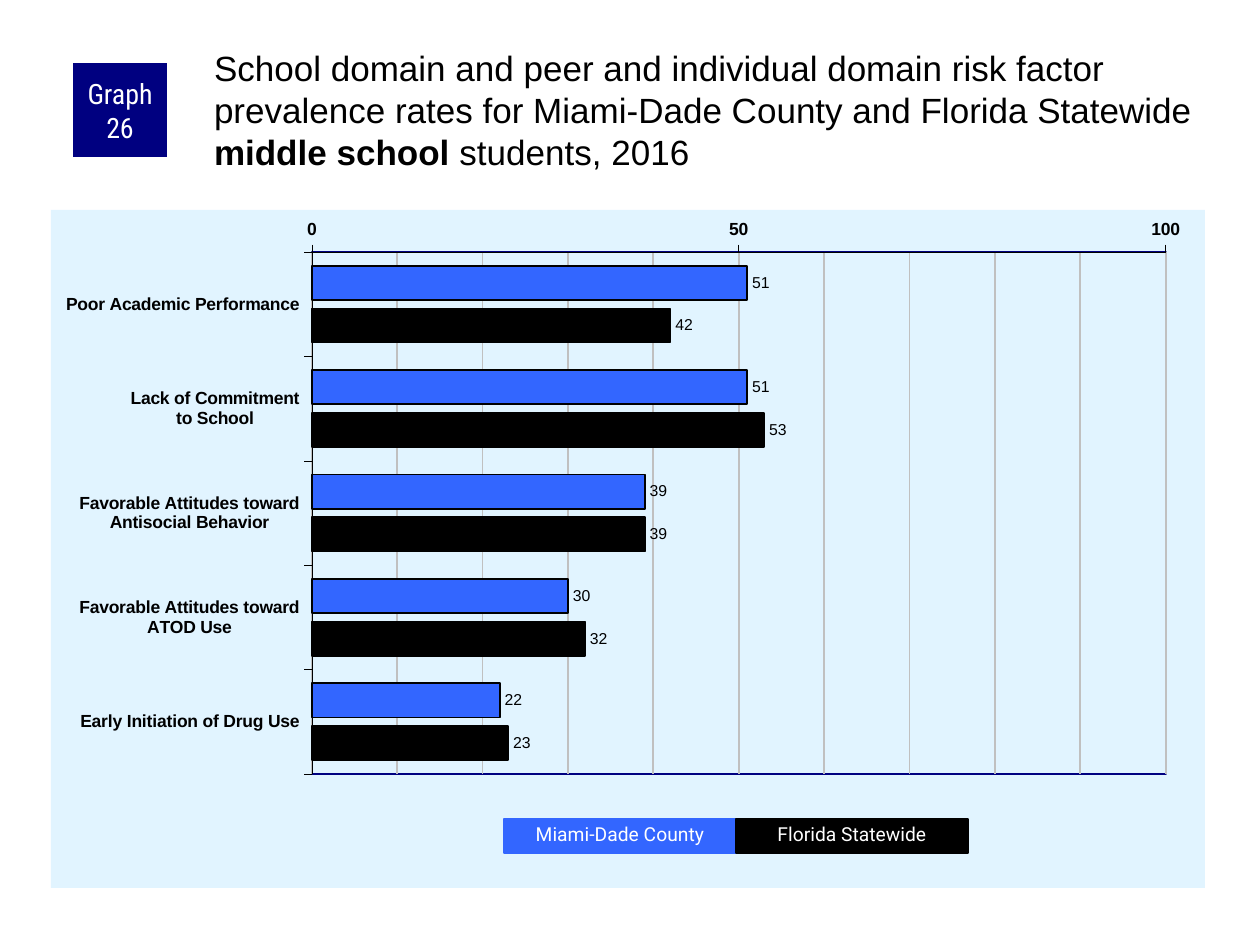
from copy import deepcopy

from lxml import etree
from pptx import Presentation
from pptx.chart.data import CategoryChartData
from pptx.dml.color import RGBColor
from pptx.enum.chart import XL_AXIS_CROSSES, XL_CHART_TYPE, XL_LABEL_POSITION, XL_TICK_MARK
from pptx.enum.shapes import MSO_SHAPE
from pptx.enum.text import MSO_ANCHOR, MSO_AUTO_SIZE, PP_ALIGN
from pptx.oxml.ns import qn
from pptx.util import Emu, Pt

RECTANGLE = MSO_SHAPE.RECTANGLE
LEFT, CENTER = PP_ALIGN.LEFT, PP_ALIGN.CENTER
TOP, MIDDLE = MSO_ANCHOR.TOP, MSO_ANCHOR.MIDDLE
AXIS_MAXIMUM = XL_AXIS_CROSSES.MAXIMUM
CLUSTERED_BARS = XL_CHART_TYPE.BAR_CLUSTERED
OUTSIDE_END = XL_LABEL_POSITION.OUTSIDE_END
TICK_OUTSIDE, TICK_NONE = XL_TICK_MARK.OUTSIDE, XL_TICK_MARK.NONE

BLACK = RGBColor(0x00, 0x00, 0x00)
WHITE = RGBColor(0xFF, 0xFF, 0xFF)
NAVY = RGBColor(0x00, 0x00, 0x80)
BLUE = RGBColor(0x33, 0x66, 0xFF)
PALE_BLUE = RGBColor(0xE1, 0xF4, 0xFF)
GRAY = RGBColor(0xC0, 0xC0, 0xC0)

PX_PER_INCH = 126
CHART_NAMESPACE = "http://schemas.openxmlformats.org/drawingml/2006/chart"
DRAWING_NAMESPACE = "http://schemas.openxmlformats.org/drawingml/2006/main"
NAMESPACES = f'xmlns:c="{CHART_NAMESPACE}" xmlns:a="{DRAWING_NAMESPACE}"'

RISK_FACTORS = [
    "Poor Academic Performance",
    "Lack of Commitment\nto School",
    "Favorable Attitudes toward\nAntisocial Behavior",
    "Favorable Attitudes toward\nATOD Use",
    "Early Initiation of Drug Use",
]
REGIONS = [
    ("Miami-Dade County", BLUE, (51, 51, 39, 30, 22)),
    ("Florida Statewide", BLACK, (42, 53, 39, 32, 23)),
]


def px(length):
    return Emu(round(length * 914400 / PX_PER_INCH))


def set_font(font, size, color, name="Arial", bold=False):
    font.size = Pt(size)
    font.name = name
    font.bold = bold
    font.color.rgb = color


def set_line(line, color, width):
    line.color.rgb = color
    line.width = Pt(width)


def write_text(shape, runs, size, color, name="Arial", align=CENTER, anchor=MIDDLE,
               margins=(0, 0, 0, 0), line_spacing=None):
    """Fill a shape with one paragraph of (text, bold) runs."""
    frame = shape.text_frame
    frame.word_wrap = True
    frame.auto_size = MSO_AUTO_SIZE.NONE
    frame.vertical_anchor = anchor
    (frame.margin_left, frame.margin_top,
     frame.margin_right, frame.margin_bottom) = map(px, margins)
    paragraph = frame.paragraphs[0]
    paragraph.alignment = align
    paragraph.line_spacing = line_spacing
    for text, bold in runs:
        run = paragraph.add_run()
        run.text = text
        set_font(run.font, size, color, name, bold)


def add_box(slide, left, top, width, height, fill, line=None):
    box = slide.shapes.add_shape(RECTANGLE, px(left), px(top), px(width), px(height))
    box.shadow.inherit = False
    box.fill.solid()
    box.fill.fore_color.rgb = fill
    if line is None:
        box.line.fill.background()
    else:
        set_line(box.line, line, 0.75)
    return box


def add_header(slide, left, top, width, height):
    # Graph number
    badge = add_box(slide, left, top + 21, 94, 94, NAVY)
    write_text(badge, [("Graph 26", False)], 16, WHITE, "Roboto Condensed",
               margins=(6, 0, 6, 0))
    # Title
    title = slide.shapes.title
    title.left, title.top = px(left + 137), px(top)
    title.width, title.height = px(width - 137), px(height)
    write_text(title, [
        ("School domain and peer and individual domain risk factor prevalence rates "
         "for Miami-Dade County and Florida Statewide ", False),
        ("middle school", True),
        (" students, 2016", False),
    ], 20, BLACK, align=LEFT, anchor=TOP, margins=(4, 4, 0, 0))


def format_axis(axis):
    axis.major_tick_mark = TICK_OUTSIDE
    axis.minor_tick_mark = TICK_NONE
    set_line(axis.format.line, BLACK, 0.25)
    set_font(axis.tick_labels.font, 10, BLACK, bold=True)


def style_areas(chart):
    """Place the plot, outline it, and fill the chart background."""
    chart_space = chart.element
    plot_area = chart_space.find(".//" + qn("c:plotArea"))
    for old_layout in plot_area.findall(qn("c:layout")):
        plot_area.remove(old_layout)
    placement = "".join(
        f'<c:{tag} val="{value}"/>' for tag, value in [
            ("layoutTarget", "inner"), ("xMode", "edge"), ("yMode", "edge"),
            ("x", 0.226), ("y", 0.062), ("w", 0.74), ("h", 0.77)])
    plot_area.insert(0, etree.fromstring(
        f"<c:layout {NAMESPACES}><c:manualLayout>{placement}</c:manualLayout></c:layout>"))
    plot_area.append(etree.fromstring(
        f'<c:spPr {NAMESPACES}><a:noFill/><a:ln w="12700"><a:solidFill>'
        f'<a:srgbClr val="{NAVY}"/></a:solidFill></a:ln></c:spPr>'))
    chart_space.find(qn("c:chart")).addnext(etree.fromstring(
        f'<c:spPr {NAMESPACES}><a:solidFill><a:srgbClr val="{PALE_BLUE}"/></a:solidFill>'
        f"<a:ln><a:noFill/></a:ln></c:spPr>"))


def add_gridlines(chart):
    """Draw major and minor gridlines alike."""
    axis = chart.value_axis
    axis.has_major_gridlines = axis.has_minor_gridlines = True
    set_line(axis.major_gridlines.format.line, GRAY, 1)
    major = chart.element.find(".//" + qn("c:majorGridlines"))
    minor = chart.element.find(".//" + qn("c:minorGridlines"))
    minor.append(deepcopy(major.find(qn("c:spPr"))))


def add_risk_chart(slide, left, top, width, height):
    data = CategoryChartData()
    data.categories = RISK_FACTORS
    for region, _, rates in REGIONS:
        data.add_series(region, rates)
    chart = slide.shapes.add_chart(CLUSTERED_BARS, px(left), px(top),
                                   px(width), px(height), data).chart
    chart.has_title = False
    chart.has_legend = False
    set_font(chart.font, 11.8, BLACK)
    style_areas(chart)

    # Axes
    category_axis, value_axis = chart.category_axis, chart.value_axis
    format_axis(category_axis)
    format_axis(value_axis)
    category_axis.reverse_order = True
    category_axis.crosses = AXIS_MAXIMUM
    value_axis.minimum_scale, value_axis.maximum_scale = 0, 100
    value_axis.major_unit, value_axis.minor_unit = 50, 10
    add_gridlines(chart)

    # Bars
    plot = chart.plots[0]
    plot.gap_width, plot.overlap = 80, -25
    plot.vary_by_categories = False
    for series, (_, color, _) in zip(plot.series, REGIONS):
        series.format.fill.solid()
        series.format.fill.fore_color.rgb = color
        set_line(series.format.line, BLACK, 1)
        labels = series.data_labels
        labels.show_value = True
        labels.position = OUTSIDE_END
        set_font(labels.font, 9, BLACK)


def add_legend(slide, left, top, width, height):
    key_width = width // len(REGIONS)
    for index, (region, color, _) in enumerate(REGIONS):
        key = add_box(slide, left + index * key_width, top, key_width, height, color, color)
        write_text(key, [(region, False)], 11, WHITE, "Roboto", anchor=TOP,
                   margins=(13, 6, 13, 6), line_spacing=0.9)


def main():
    presentation = Presentation()
    presentation.slide_width, presentation.slide_height = px(1260), px(945)
    slide = presentation.slides.add_slide(presentation.slide_layouts[5])
    add_risk_chart(slide, 51, 210, 1154, 678)
    add_header(slide, 73, 42, 1135, 105)
    add_legend(slide, 504, 819, 464, 34)
    presentation.save("out.pptx")


if __name__ == "__main__":
    main()
